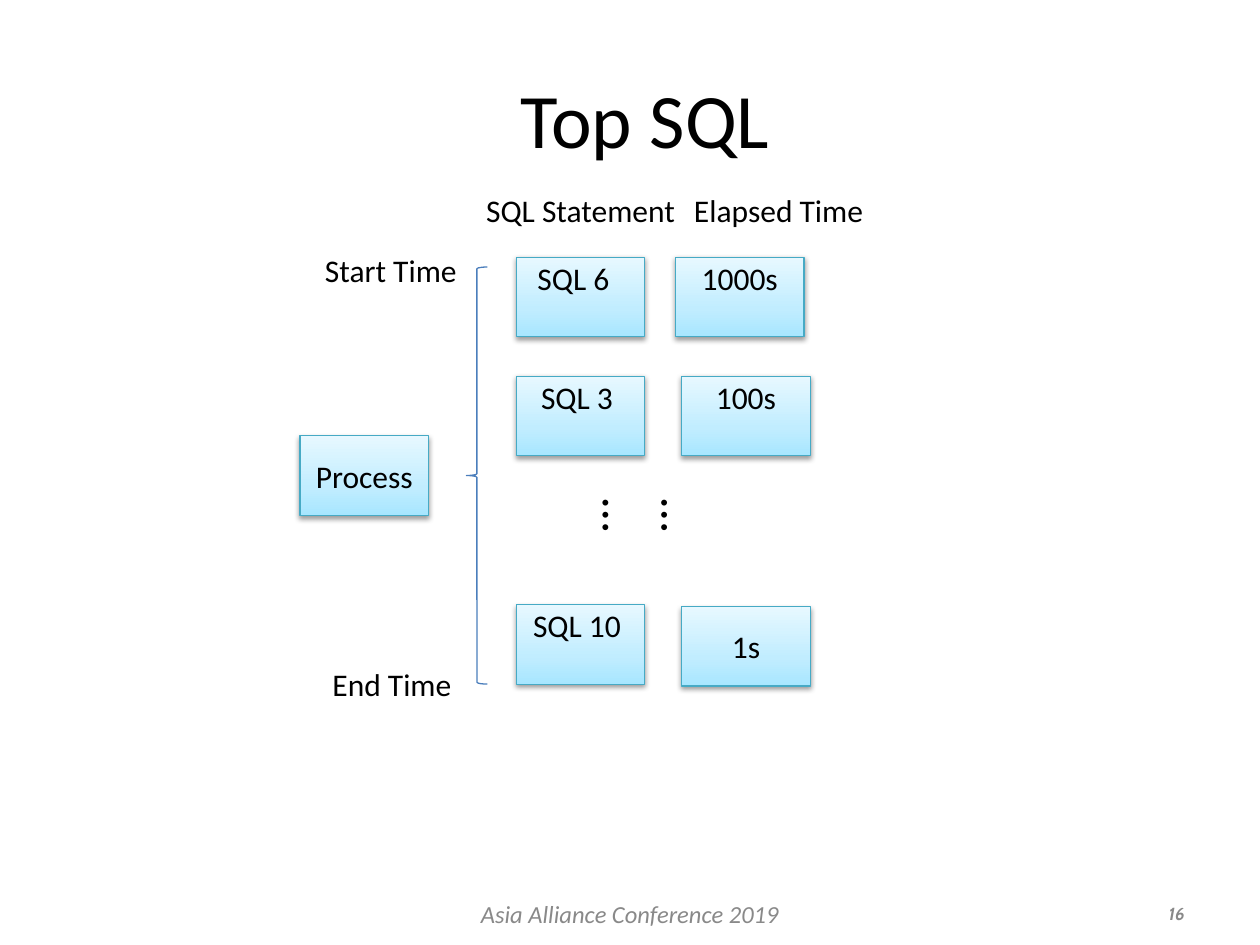
from dataclasses import dataclass

from lxml import etree
from pptx import Presentation
from pptx import util as u
from pptx.dml import color
from pptx.enum import shapes, text
from pptx.oxml import ns


@dataclass(frozen=True)
class Theme:
    face: str = "Calibri"
    number_face: str = "Cabin"
    ink: str = "000000"
    muted: str = "898989"
    border: str = "46AAC5"
    brace: str = "4B7EBC"
    gradient: tuple = ((0, "A7E6FF"), (35, "C1EDFF"), (100, "E7F8FF"))
    title: int = 44
    dots: int = 28
    body: int = 18
    footer: int = 14
    number: int = 10


class Page:
    """Draws styled elements on one slide, with all lengths in points."""

    def __init__(self, deck, theme):
        self.theme = theme
        self.slide = deck.slides.add_slide(deck.slide_layouts[5])

    def set_text(self, box, words, size, align=text.PP_ALIGN.LEFT,
                 anchor=text.MSO_ANCHOR.TOP, ink=None, face=None, bold=False, italic=False):
        frame = box.text_frame
        frame.vertical_anchor = anchor
        para = frame.paragraphs[0]
        para.text = words
        para.alignment = align
        font = para.font
        font.name, font.size = face or self.theme.face, u.Pt(size)
        font.bold, font.italic = bold, italic
        font.color.rgb = color.RGBColor.from_string(ink or self.theme.ink)

    def title(self, words, left, top, width, height):
        box = self.slide.shapes.title
        box.left, box.top, box.width, box.height = map(u.Pt, (left, top, width, height))
        self.set_text(box, words, self.theme.title, text.PP_ALIGN.CENTER,
                      text.MSO_ANCHOR.MIDDLE)

    def label(self, words, left, top, width, height=29, size=None, wrap=True, **style):
        box = self.slide.shapes.add_textbox(*map(u.Pt, (left, top, width, height)))
        box.text_frame.word_wrap = wrap
        self.set_text(box, words, size or self.theme.body, **style)
        return box

    def vertical_label(self, words, left, top, width, height):
        box = self.label(words, left, top, width, height, self.theme.dots)
        box.text_frame._txBody.bodyPr.set("vert", "eaVert")

    def outline(self, kind, left, top, width, height, ink):
        shape = self.slide.shapes.add_shape(kind, *map(u.Pt, (left, top, width, height)))
        shape.shadow.inherit = False
        shape.line.color.rgb = color.RGBColor.from_string(ink)
        shape.line.width = u.Pt(0.75)
        return shape

    def brace(self, left, top, width, height):
        shape = self.outline(shapes.MSO_SHAPE.LEFT_BRACE, left, top, width, height,
                             self.theme.brace)
        shape.fill.background()

    def card(self, words, left, top, raised=True, trailing=0):
        shape = self.outline(shapes.MSO_SHAPE.RECTANGLE, left, top, 73.5, 45.5,
                             self.theme.border)
        self.shade(shape)
        self.cast_shadow(shape)
        frame = shape.text_frame
        frame.word_wrap = True
        frame.margin_top = frame.margin_bottom = u.Pt(1)
        frame.margin_right = u.Pt(7.2 + trailing)
        anchor = text.MSO_ANCHOR.TOP if raised else text.MSO_ANCHOR.MIDDLE
        self.set_text(shape, words, self.theme.body, text.PP_ALIGN.CENTER, anchor)

    def shade(self, shape):
        shape.fill.gradient()
        shape.fill.gradient_angle = 90
        stops = shape._element.spPr.find(".//" + ns.qn("a:gsLst"))
        for stop in list(stops):
            stops.remove(stop)
        for percent, tint in self.theme.gradient:
            stop = etree.SubElement(stops, ns.qn("a:gs"), pos=str(percent * 1000))
            etree.SubElement(stop, ns.qn("a:srgbClr"), val=tint)

    def cast_shadow(self, shape):
        effects = shape._element.spPr.find(ns.qn("a:effectLst"))
        shadow = etree.SubElement(effects, ns.qn("a:outerShdw"), blurRad=str(u.Pt(3.1)),
                                  dist=str(u.Pt(1.6)), dir="5400000", rotWithShape="0")
        tint = etree.SubElement(shadow, ns.qn("a:srgbClr"), val=self.theme.ink)
        etree.SubElement(tint, ns.qn("a:alpha"), val="38000")


def main():
    deck = Presentation()
    deck.slide_width, deck.slide_height = u.Pt(720), u.Pt(540)
    theme = Theme()
    page = Page(deck, theme)
    page.title("Top SQL", 44.6, 22.3, 648, 90)

    page.card("Process", 171.4, 249, raised=False)
    page.brace(266.5, 152.6, 12, 238.3)
    rows = (
        ("SQL 6", 147, 8, "1000s", 386, 147, True),
        ("SQL 3", 215, 4, "100s", 389.5, 215, True),
        ("SQL 10", 345.5, 4, "1s", 389.5, 346.5, False),
    )
    for statement, top, trailing, elapsed, left, elapsed_top, raised in rows:
        page.card(statement, 295, top, trailing=trailing)
        page.card(elapsed, left, elapsed_top, raised)
    page.vertical_label("… …", 327.6, 278, 82, 57)

    page.label("SQL Statement", 270.7, 105.8, 128, wrap=False)
    page.label("Elapsed Time", 389.5, 105.8, 112.3, wrap=False)
    page.label("Start Time", 178.6, 139.7, 90.7)
    page.label("End Time", 182.9, 376.6, 90.7)

    footer = dict(anchor=text.MSO_ANCHOR.MIDDLE, ink=theme.muted, italic=True)
    page.label("Asia Alliance Conference 2019", 246, 507.6, 228, size=theme.footer,
               align=text.PP_ALIGN.CENTER, **footer)
    page.label("16", 516, 507.6, 168, size=theme.number, align=text.PP_ALIGN.RIGHT,
               face=theme.number_face, bold=True, **footer)
    deck.save("out.pptx")


if __name__ == "__main__":
    main()
